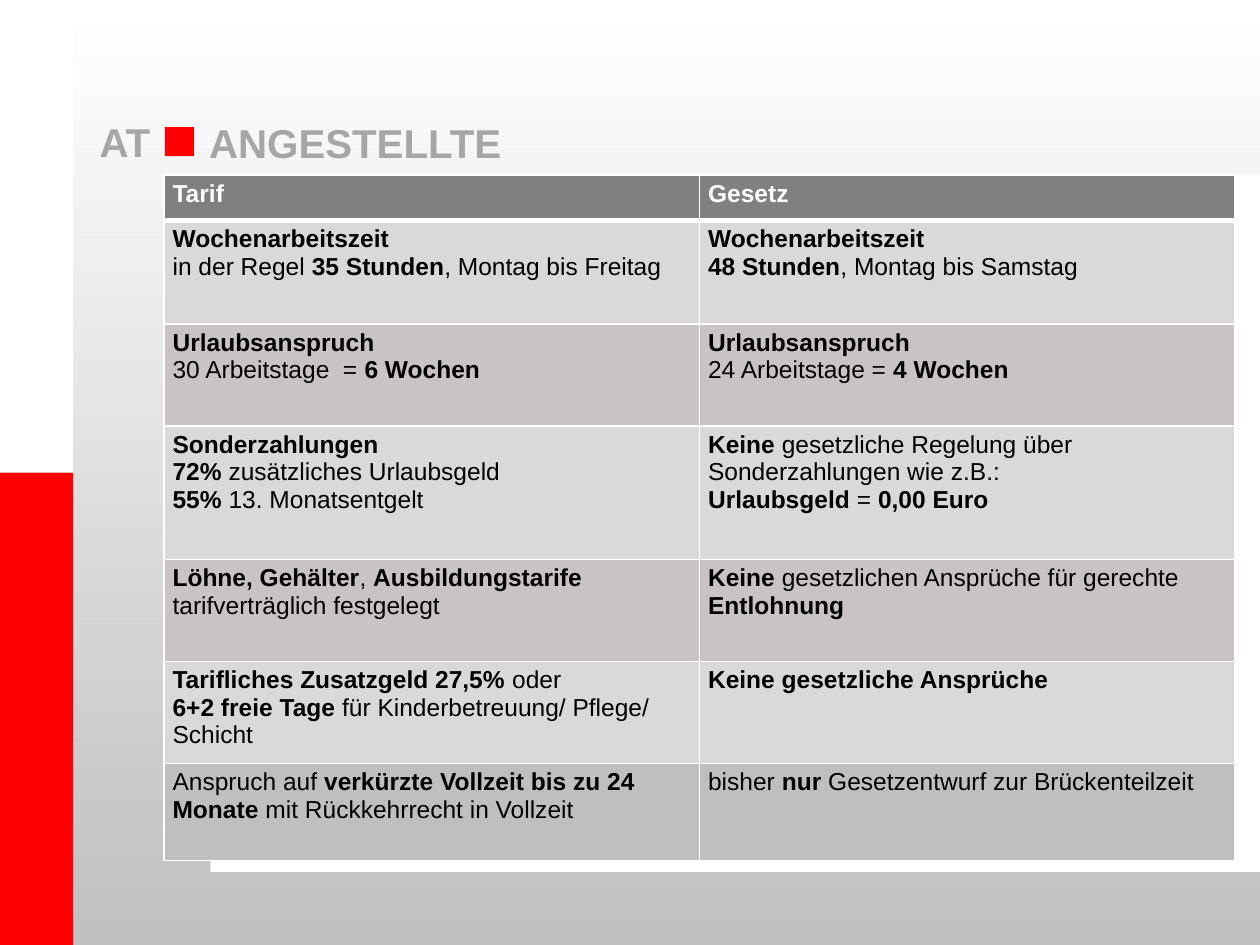
from lxml import etree
from pptx import Presentation
from pptx.dml.color import RGBColor
from pptx.enum import shapes, text
from pptx.oxml.ns import qn
from pptx.util import Inches, Pt

RED, WHITE, BLACK, TITLE_GREY = "FF0000", "FFFFFF", "000000", "A6A6A6"
COL_WIDTH = 4.25

# Each row: height, fill, cells. ** toggles bold, | starts a paragraph,
# a newline is a line break inside a paragraph.
ROWS = [
    (0.36, "808080", ["**Tarif**", "**Gesetz**"]),
    (0.82, "D9D9D9", [
        "**Wochenarbeitszeit**\nin der Regel **35 Stunden**, Montag bis Freitag",
        "**Wochenarbeitszeit\n48 Stunden**, Montag bis Samstag"]),
    (0.81, "C9C3C6", [
        "**Urlaubsanspruch**\n30 Arbeitstage  = **6 Wochen**",
        "**Urlaubsanspruch**|24 Arbeitstage = **4 Wochen**"]),
    (1.06, "D9D9D9", [
        "**Sonderzahlungen\n72%** zusätzliches Urlaubsgeld|**55%** 13. Monatsentgelt",
        "**Keine** gesetzliche Regelung über Sonderzahlungen wie z.B.:\n"
        "**Urlaubsgeld** = **0,00 Euro**"]),
    (0.81, "C9C3C6", [
        "**Löhne, Gehälter**, **Ausbildungstarife** tarifverträglich festgelegt",
        "**Keine** gesetzlichen Ansprüche für gerechte **Entlohnung**"]),
    (0.81, "D9D9D9", [
        "**Tarifliches Zusatzgeld 27,5%** oder\n"
        "**6+2 freie Tage** für Kinderbetreuung/ Pflege/ Schicht",
        "**Keine gesetzliche Ansprüche**"]),
    (0.77, "BFBFBF", [
        "Anspruch auf **verkürzte Vollzeit bis zu 24 Monate** mit Rückkehrrecht in Vollzeit",
        "bisher **nur** Gesetzentwurf zur Brückenteilzeit"]),
]


def rgb(color):
    return RGBColor.from_string(color)


def style_font(font, size, color):
    font.name, font.size = "Arial", Pt(size)
    font.color.rgb = rgb(color)


def add_rect(s, x, y, w, h, color):
    sp = s.shapes.add_shape(shapes.MSO_SHAPE.RECTANGLE,
                            Inches(x), Inches(y), Inches(w), Inches(h))
    sp.shadow.inherit = False
    sp.line.fill.background()
    sp.fill.solid()
    sp.fill.fore_color.rgb = rgb(color)
    return sp


def add_gradient(sp, *colors):
    """Fill from top to bottom with two colours."""
    sp.fill.gradient()
    sp.fill.gradient_angle = 270
    for position, (stop, color) in enumerate(zip(sp.fill.gradient_stops, colors)):
        stop.position = position
        stop.color.rgb = rgb(color)


def add_title(s, x, y, w, words):
    tf = s.shapes.add_textbox(Inches(x), Inches(y), Inches(w), Inches(0.39)).text_frame
    tf.margin_left = tf.margin_top = tf.margin_right = tf.margin_bottom = 0
    tf.word_wrap = True
    tf.auto_size = text.MSO_AUTO_SIZE.NONE
    p = tf.paragraphs[0]
    p.text = words
    style_font(p.font, 23, TITLE_GREY)
    p.font.bold = True


def write_marked(tf, marked, color):
    for i, part in enumerate(marked.split("|")):
        p = tf.add_paragraph() if i else tf.paragraphs[0]
        style_font(p.font, 14, color)
        for j, piece in enumerate(part.split("**")):
            for k, line in enumerate(piece.split("\n")):
                if k:
                    p.add_line_break()
                if line:
                    r = p.add_run()
                    r.text = line
                    style_font(r.font, 14, color)
                    r.font.bold = j % 2 == 1


def set_borders(cell, top, bottom):
    """White borders; they must stand before the fill in the cell properties."""
    tc_pr = cell._tc.get_or_add_tcPr()
    sides = (("L", 1), ("R", 1), ("T", top), ("B", bottom))
    for i, (side, width) in enumerate(sides):
        ln = etree.Element(qn(f"a:ln{side}"), w=str(Pt(width)))
        fill = etree.SubElement(ln, qn("a:solidFill"))
        etree.SubElement(fill, qn("a:srgbClr"), val=WHITE)
        tc_pr.insert(i, ln)


def add_comparison(s, x, y):
    height = sum(row[0] for row in ROWS)
    table = s.shapes.add_table(len(ROWS), 2, Inches(x), Inches(y),
                               Inches(2 * COL_WIDTH), Inches(height)).table
    for col in table.columns:
        col.width = Inches(COL_WIDTH)
    for i, (row_height, color, cells) in enumerate(ROWS):
        table.rows[i].height = Inches(row_height)
        for cell, marked in zip(table.rows[i].cells, cells):
            cell.margin_left = cell.margin_right = Inches(0.07)
            cell.margin_top = cell.margin_bottom = Inches(0.04)
            cell.fill.solid()
            cell.fill.fore_color.rgb = rgb(color)
            set_borders(cell, 3 if i == 1 else 1, 3 if i == 0 else 1)
            write_marked(cell.text_frame, marked, BLACK if i else WHITE)


def main():
    prs = Presentation()
    prs.slide_width, prs.slide_height = Inches(10), Inches(7.5)
    s = prs.slides.add_slide(prs.slide_layouts[6])
    add_gradient(add_rect(s, 0, 0, 10, 7.5, WHITE), WHITE, "C0C0C0")
    add_rect(s, 0, 3.75, 0.58, 3.75, RED)
    add_rect(s, 0, 0, 0.58, 3.75, WHITE)
    add_rect(s, 1.67, 1.39, 8.33, 5.53, WHITE)
    add_title(s, 0.79, 0.93, 0.45, "AT")
    add_rect(s, 1.31, 1.01, 0.23, 0.23, RED)
    add_title(s, 1.66, 0.94, 2.4, "ANGESTELLTE")
    add_comparison(s, 1.3, 1.39)
    prs.save("out.pptx")


if __name__ == "__main__":
    main()
